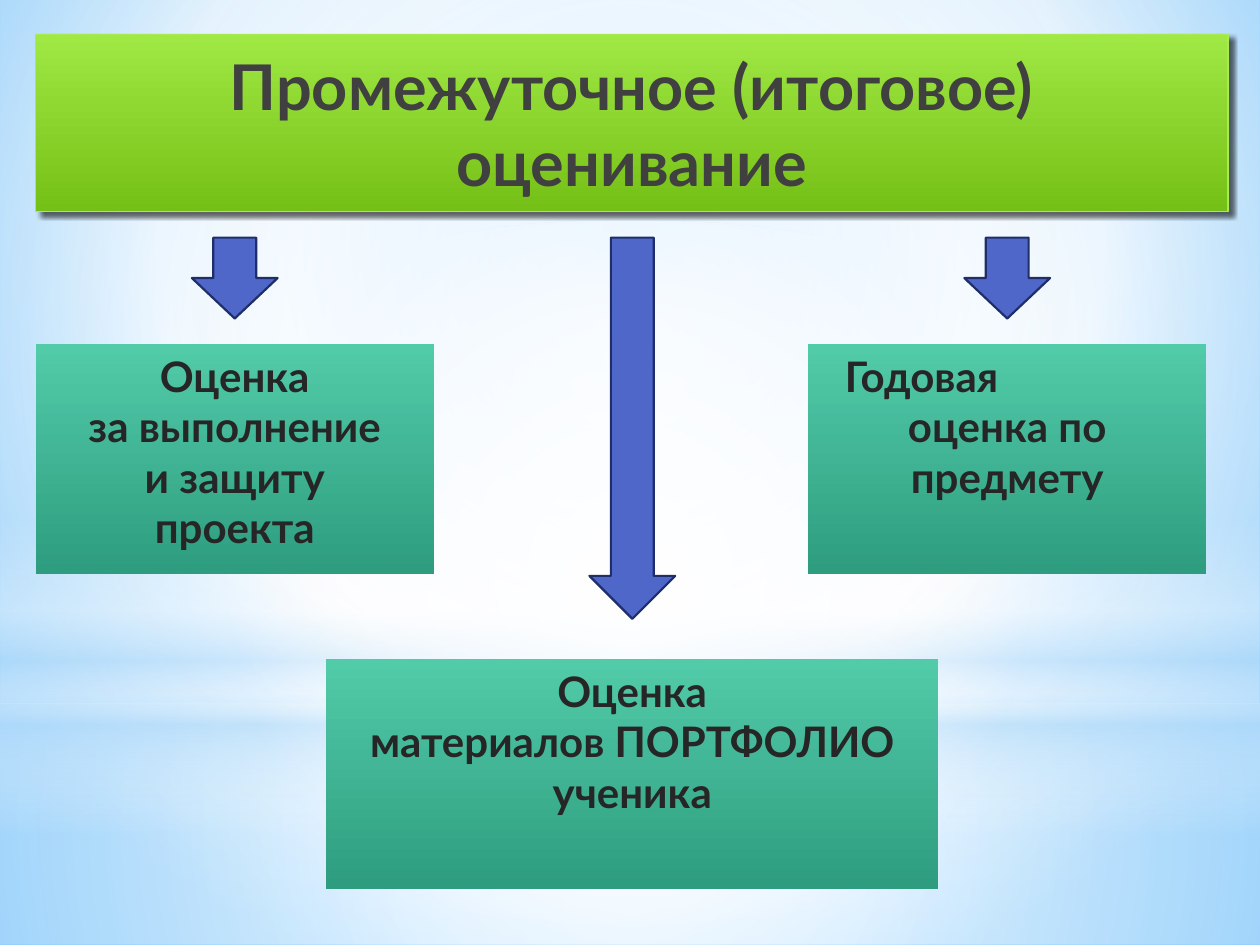
from dataclasses import dataclass

from lxml import etree
from pptx import Presentation
from pptx import util as u
from pptx.dml.color import RGBColor
from pptx.enum import shapes, text
from pptx.oxml import ns


@dataclass(frozen=True)
class Theme:
    """Colours, gradient stops and type sizes of the slide."""
    font: str = "Lato"
    title_size: int = 36
    body_size: int = 24
    title_ink: str = "404040"
    body_ink: str = "262626"
    title_line: str = "A7EA52"
    arrow: str = "4E67C8"
    arrow_line: str = "1F2E69"
    sky: tuple = ((0, "9ED5FF", 100), (60, "FFFFFF", 100), (100, "5BB9FF", 100))
    lower: tuple = ((0, "FFFFFF", 91), (37, "FFFFFF", 76), (100, "B4DCFA", 79))
    upper: tuple = ((0, "FFFFFF", 89), (48, "FFFFFF", 62), (100, "B4DCFA", 79))
    band: tuple = ((0, "FFFFFF", 0), (29, "FFFFFF", 30), (45, "B4DCFA", 40),
                   (55, "FFFFFF", 26), (65, "B4DCFA", 60), (100, "FFFFFF", 0))
    glow: tuple = ((0, "FFFFFF", 100), (56, "FFFFFF", 0))
    lime: tuple = ((0, "A0E844", 100), (100, "75C016", 100))
    teal: tuple = ((0, "52CBA9", 100), (100, "2E9D7F", 100))


THEME = Theme()
SHAPE = shapes.MSO_SHAPE
CENTRE = (50, 50, 50, 50)


def add_node(parent, tag, **values):
    """Append a DrawingML element with the given attributes."""
    node = etree.SubElement(parent, ns.qn(f"a:{tag}"))
    for name, value in values.items():
        node.set(name, str(value))
    return node


def set_gradient(owner, fill, stops, focus=None):
    """Give a fill its stops, running downwards or out from a focus rectangle."""
    fill.gradient()
    gradient = owner.find(f".//{ns.qn('a:gradFill')}")
    for child in list(gradient):
        gradient.remove(child)
    stop_list = add_node(gradient, "gsLst")
    for position, colour, opacity in stops:
        stop = add_node(stop_list, "gs", pos=position * 1000)
        ink = add_node(stop, "srgbClr", val=colour)
        if opacity < 100:
            add_node(ink, "alpha", val=opacity * 1000)
    if focus:
        circle = add_node(gradient, "path", path="circle")
        edges = {side: edge * 1000 for side, edge in zip("ltrb", focus)}
        add_node(circle, "fillToRect", **edges)
    else:
        add_node(gradient, "lin", ang=5400000, scaled=0)


def draw_shape(page, kind, box, line=None, width=0):
    """Add a preset shape without shadow, outlined only when a line is given."""
    shape = page.shapes.add_shape(kind, *(u.Pt(length) for length in box))
    shape.shadow.inherit = False
    if line:
        shape.line.color.rgb = RGBColor.from_string(line)
        shape.line.width = u.Pt(width)
    else:
        shape.line.fill.background()
    return shape


def draw_panel(page, box, stops, focus=None, kind=SHAPE.RECTANGLE, **outline):
    """Add a shape filled with a gradient."""
    panel = draw_shape(page, kind, box, **outline)
    set_gradient(panel._element.spPr, panel.fill, stops, focus)
    return panel


def write_lines(panel, lines, size, ink, anchor):
    """Write bold centred paragraphs; an indented line starts from the left."""
    frame = panel.text_frame
    frame.word_wrap = True
    frame.vertical_anchor = anchor
    font_values = {"name": THEME.font, "size": u.Pt(size), "bold": True}
    for index, (words, indent) in enumerate(lines):
        para = frame.add_paragraph() if index else frame.paragraphs[0]
        para.alignment = text.PP_ALIGN.LEFT if indent else text.PP_ALIGN.CENTER
        if indent:
            para._p.get_or_add_pPr().set("marL", str(u.Pt(indent)))
        span = para.add_run()
        span.text = words
        for name, value in font_values.items():
            setattr(span.font, name, value)
        span.font.color.rgb = RGBColor.from_string(ink)


def draw_backdrop(page, box):
    """Paint the sky and its soft layers of light across the box."""
    left, top, width, height = box
    horizon = 401.8
    set_gradient(page._element, page.background.fill, THEME.sky, (20, 10, 20, 60))
    draw_panel(page, (left, top + horizon, width, height - horizon),
               THEME.lower, CENTRE)
    draw_panel(page, (left, top, width, horizon), THEME.upper, CENTRE)
    draw_panel(page, (left, top + 296.6, width, 180), THEME.band)
    draw_panel(page, (left, top + 126, width, horizon), THEME.glow, CENTRE,
               SHAPE.OVAL)


def draw_title(page, box):
    """Place the heading on a lime banner with a soft shadow."""
    banner = draw_panel(page, box, THEME.lime, line=THEME.title_line, width=0.75)
    effects = banner._element.spPr.find(ns.qn("a:effectLst"))
    shadow = add_node(effects, "outerShdw", blurRad=u.Pt(3), dist=u.Pt(3),
                      dir=2700000, rotWithShape=0)
    add_node(add_node(shadow, "srgbClr", val="000000"), "alpha", val=60000)
    write_lines(banner, [("Промежуточное (итоговое) оценивание", 0)],
                THEME.title_size, THEME.title_ink, text.MSO_ANCHOR.MIDDLE)


def draw_branch(page, box, lines, gap):
    """Place an assessment card and the arrow that comes down to it."""
    left, top, width, _ = box
    card = draw_panel(page, box, THEME.teal)
    write_lines(card, lines, THEME.body_size, THEME.body_ink, text.MSO_ANCHOR.TOP)
    arrow_top, arrow_width = 135.8, 49
    arrow_box = (left + (width - arrow_width) / 2, arrow_top,
                 arrow_width, top - gap - arrow_top)
    arrow = draw_shape(page, SHAPE.DOWN_ARROW, arrow_box, THEME.arrow_line, 1.25)
    arrow.fill.solid()
    arrow.fill.fore_color.rgb = RGBColor.from_string(THEME.arrow)


def main():
    """Build the slide and save it."""
    deck = Presentation()
    deck.slide_width, deck.slide_height = u.Pt(720), u.Pt(540)
    page = deck.slides.add_slide(deck.slide_layouts[6])
    draw_backdrop(page, (0, 0, 720, 540))
    draw_title(page, (20.2, 19.8, 681.5, 101))
    row_top, card_width, card_height = 196.6, 227.5, 131.4
    draw_branch(page, (20.4, row_top, card_width, card_height),
                [("Оценка", 0), ("за выполнение", 0), ("и защиту", 0),
                 ("проекта", 0)], 14.6)
    draw_branch(page, (461.8, row_top, card_width, card_height),
                [("Годовая", 14), ("оценка по предмету", 0)], 14.6)
    draw_branch(page, (186.4, 376.6, 349.8, card_height),
                [("Оценка", 0), ("материалов ПОРТФОЛИО ученика", 0)], 23)
    deck.save("out.pptx")


if __name__ == "__main__":
    main()
